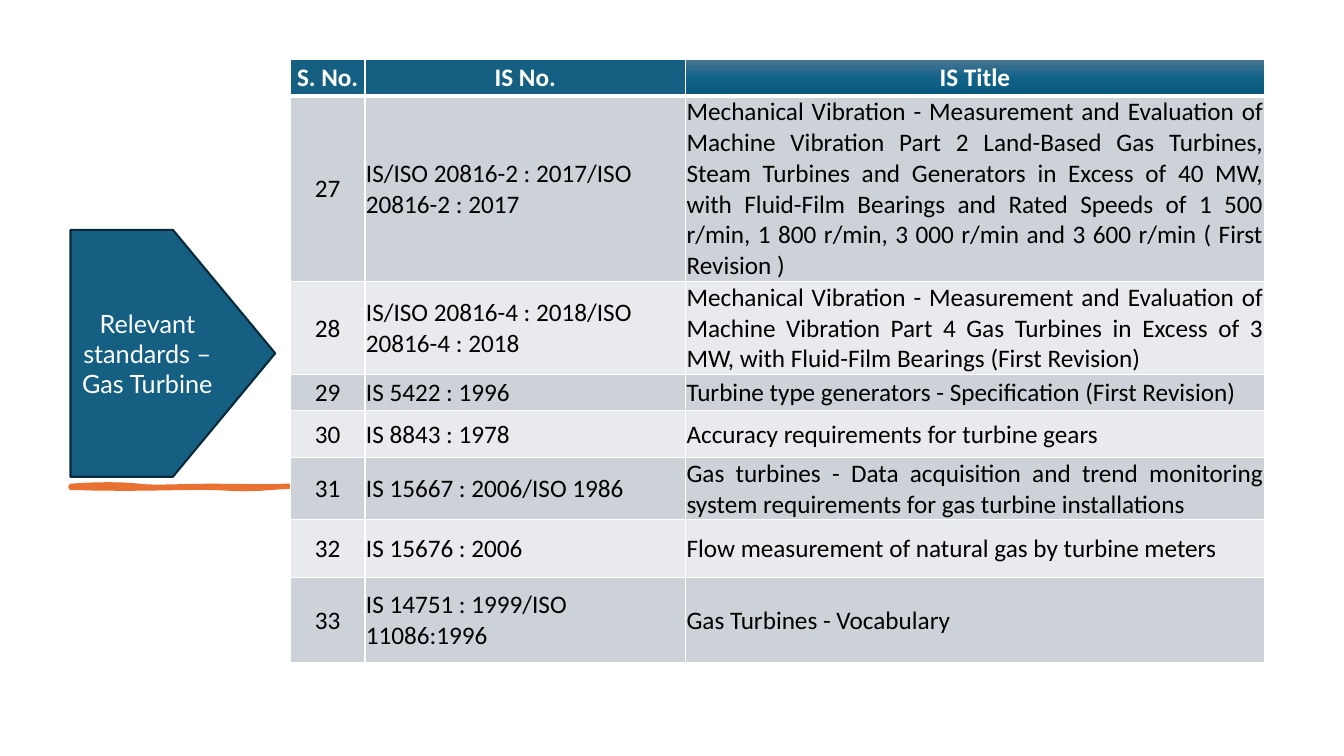
from pptx import Presentation
from pptx import util as u
from pptx.dml.color import RGBColor
from pptx.enum import shapes as s
from pptx.enum import text as t
from pptx.oxml import parse_xml
from pptx.oxml.ns import nsdecls

HUES = {
    "teal": "156082", "navy": "092A39", "orange": "E97132",
    "white": "FFFFFF", "black": "000000", "odd": "CCD2D8", "even": "E8EAED",
}
FADE = [(0, "4C7591"), (50, "106287"), (100, "09597D")]
LEFT, MID, JUST = t.PP_ALIGN.LEFT, t.PP_ALIGN.CENTER, t.PP_ALIGN.JUSTIFY
HEADS = ["S. No.", "IS No.", "IS Title"]
COLS = [0.74, 3.18, 5.74]
ROWS = [0.36, 1.71, 0.86, 0.36, 0.46, 0.58, 0.57, 0.85]
FIRST = 27
CODES = [
    ("IS/ISO 20816-2 : 2017/ISO 20816-2 : 2017",
     "Mechanical Vibration - Measurement and Evaluation of Machine Vibration "
     "Part 2 Land-Based Gas Turbines, Steam Turbines and Generators in Excess "
     "of 40 MW, with Fluid-Film Bearings and Rated Speeds of 1 500 r/min, "
     "1 800 r/min, 3 000 r/min and 3 600 r/min ( First Revision )"),
    ("IS/ISO 20816-4 : 2018/ISO 20816-4 : 2018",
     "Mechanical Vibration - Measurement and Evaluation of Machine Vibration "
     "Part 4 Gas Turbines in Excess of 3 MW, with Fluid-Film Bearings "
     "(First Revision)"),
    ("IS 5422 : 1996", "Turbine type generators - Specification (First Revision)"),
    ("IS 8843 : 1978", "Accuracy requirements for turbine gears"),
    ("IS 15667 : 2006/ISO 1986",
     "Gas turbines - Data acquisition and trend monitoring system requirements "
     "for gas turbine installations"),
    ("IS 15676 : 2006", "Flow measurement of natural gas by turbine meters"),
    ("IS 14751 : 1999/ISO 11086:1996", "Gas Turbines - Vocabulary"),
]
START = (0.7, 4.82)
CURVES = [
    [(0.97, 4.8), (1.21, 4.8), (1.38, 4.82)],
    [(1.55, 4.84), (1.77, 4.82), (2.09, 4.82)],
    [(2.41, 4.82), (2.6, 4.83), (2.84, 4.82)],
    [(3.08, 4.81), (3.39, 4.84), (3.59, 4.82)],
    [(3.79, 4.81), (4.12, 4.83), (4.26, 4.82)],
    [(4.26, 4.83), (4.26, 4.84), (4.26, 4.84)],
    [(4.08, 4.85), (3.64, 4.83), (3.48, 4.84)],
    [(3.32, 4.85), (3.04, 4.81), (2.7, 4.84)],
    [(2.35, 4.87), (2.31, 4.84), (1.99, 4.84)],
    [(1.66, 4.84), (1.32, 4.86), (0.7, 4.84)],
]
STEPS = 8


def hue(name):
    return RGBColor.from_string(HUES[name])


def paint(item, fill, line, width):
    item.shadow.inherit = False
    item.fill.solid()
    item.fill.fore_color.rgb = hue(fill)
    item.line.color.rgb = hue(line)
    item.line.width = u.Pt(width)


def write(frame, words, font="Calibri", size=18, color="black", bold=False, align=LEFT):
    para = frame.paragraphs[0]
    para.alignment = align
    run = para.add_run()
    run.text = words
    run.font.name = font
    run.font.size = u.Pt(size)
    run.font.bold = bold
    run.font.color.rgb = hue(color)


def bend(start, curve, step):
    b = step / STEPS
    a = 1 - b
    parts = (a ** 3, 3 * a * a * b, 3 * a * b * b, b ** 3)
    return [u.Inches(sum(k * p[axis] for k, p in zip(parts, [start, *curve])))
            for axis in (0, 1)]


def add_stroke(slide):
    dots, last = [], START
    for curve in CURVES:
        dots += [bend(last, curve, n) for n in range(1, STEPS + 1)]
        last = curve[-1]
    pen = slide.shapes.build_freeform(*map(u.Inches, START))
    pen.add_line_segments(dots, close=True)
    paint(pen.convert_to_shape(), "orange", "orange", 3)


def add_label(slide):
    label = slide.shapes.add_shape(
        s.MSO_SHAPE.PENTAGON, u.Inches(0.7), u.Inches(2.28),
        u.Inches(2.03), u.Inches(2.45))
    paint(label, "teal", "navy", 1.5)
    frame = label.text_frame
    frame.word_wrap = True
    frame.vertical_anchor = t.MSO_ANCHOR.MIDDLE
    write(frame, "Relevant standards – Gas Turbine", font="Lato", color="white", align=MID)


def edge(cell, side, width):
    cell._tc.get_or_add_tcPr().append(parse_xml(
        f'<a:ln{side} {nsdecls("a")} w="{u.Pt(width)}"><a:solidFill>'
        f'<a:srgbClr val="{HUES["white"]}"/></a:solidFill></a:ln{side}>'))


def fade(cell):
    stops = "".join(f'<a:gs pos="{pos * 1000}"><a:srgbClr val="{val}"/></a:gs>'
                    for pos, val in FADE)
    cell._tc.get_or_add_tcPr().append(parse_xml(
        f'<a:gradFill {nsdecls("a")}><a:gsLst>{stops}</a:gsLst>'
        '<a:lin ang="5400000" scaled="0"/></a:gradFill>'))


def fill_cell(cell, words, row, col):
    head = row == 0
    cell.margin_left = cell.margin_right = cell.margin_top = u.Inches(0.01)
    cell.margin_bottom = 0
    cell.vertical_anchor = t.MSO_ANCHOR.MIDDLE
    for side in "LRTB":
        thick = (head and side == "B") or (row == 1 and side == "T")
        edge(cell, side, 3 if thick else 1)
    if head and col == 2:
        fade(cell)
    else:
        cell.fill.solid()
        cell.fill.fore_color.rgb = hue("teal" if head else "odd" if row % 2 else "even")
    write(cell.text_frame, words, color="white" if head else "black", bold=head,
          align=MID if head else (MID, LEFT, JUST)[col])


def add_grid(slide):
    data = [HEADS] + [(str(n), *code) for n, code in enumerate(CODES, FIRST)]
    grid = slide.shapes.add_table(
        len(ROWS), len(COLS), u.Inches(2.88), u.Inches(0.59),
        u.Inches(sum(COLS)), u.Inches(sum(ROWS))).table
    for col, width in zip(grid.columns, COLS):
        col.width = u.Inches(width)
    for row, height in zip(grid.rows, ROWS):
        row.height = u.Inches(height)
    for r, line in enumerate(data):
        for c, words in enumerate(line):
            fill_cell(grid.cell(r, c), words, r, c)


def main():
    deck = Presentation()
    deck.slide_width, deck.slide_height = u.Inches(13.33), u.Inches(7.5)
    slide = deck.slides.add_slide(deck.slide_layouts[6])
    add_stroke(slide)
    add_grid(slide)
    add_label(slide)
    deck.save("out.pptx")


if __name__ == "__main__":
    main()
